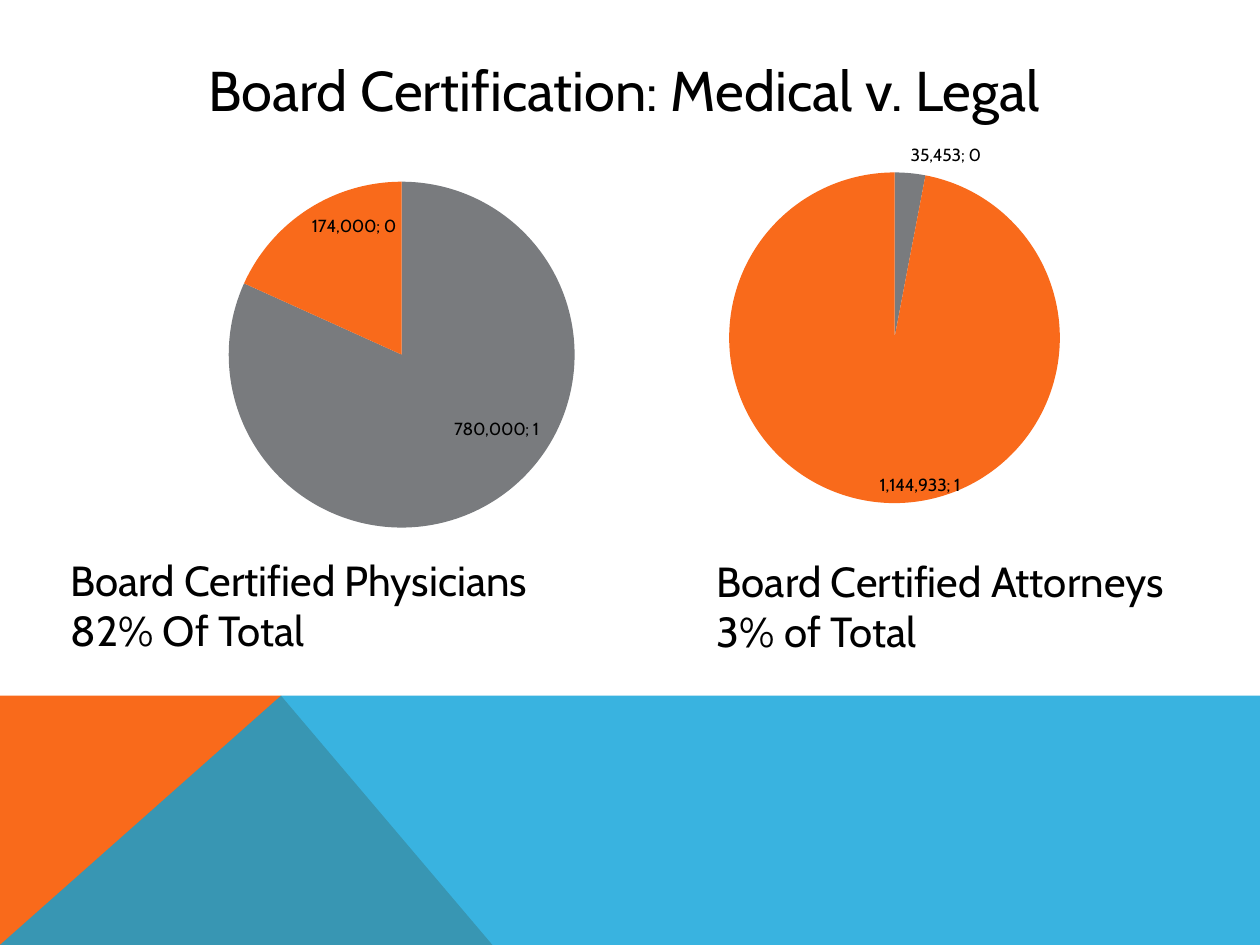
from dataclasses import dataclass
from typing import Optional

from lxml import etree
from pptx import Presentation
from pptx.chart import data as chart_data
from pptx.dml.color import RGBColor
from pptx.enum import chart as charts, text
from pptx.oxml import parse_xml
from pptx.oxml import ns
from pptx.util import Pt

FONT = "Cabin"
BLACK = RGBColor(0x00, 0x00, 0x00)
GRAY = RGBColor(0x79, 0x7B, 0x7E)
ORANGE = RGBColor(0xF9, 0x6A, 0x1B)
BLUE = RGBColor(0x08, 0xA1, 0xD9)
NUMBER_FORMAT = "#,##0"
CHART_URI = "http://schemas.openxmlformats.org/drawingml/2006/chart"
INSIDE = charts.XL_LABEL_POSITION.INSIDE_END
OUTSIDE = charts.XL_LABEL_POSITION.OUTSIDE_END


@dataclass
class Box:
    left: float
    top: float
    width: float
    height: float

    def lengths(self) -> list:
        return [Pt(v) for v in (self.left, self.top, self.width, self.height)]


@dataclass
class Pie:
    box: Box
    plot: Box  # fractions of the chart area
    values: tuple
    first_position: object
    first_shift: Optional[tuple] = None  # fractions of the chart area


PIES = [
    Pie(Box(84.24, 74.16, 272.88, 237.6), Box(0.17, 0.125, 0.725, 0.832),
        (780000, 174000), INSIDE, (0.1, -0.13)),
    Pie(Box(383.76, 74.16, 262.8, 216), Box(0.036, 0.113, 0.898, 0.875),
        (35453, 1144933), OUTSIDE),
]


def layout_xml(target: str, values: dict):
    """Manual layout for a plot area or for a shifted label."""
    items = "".join(f'<c:{key} val="{value}"/>' for key, value in values.items())
    return parse_xml(f'<c:layout xmlns:c="{CHART_URI}"><c:manualLayout>'
                     f'{target}{items}</c:manualLayout></c:layout>')


def add_separator(labels) -> None:
    separator = etree.Element(ns.qn("c:separator"))
    separator.text = "; "
    labels.find(ns.qn("c:showBubbleSize")).addnext(separator)


def style_font(font, size: float) -> None:
    font.name, font.size = FONT, Pt(size)
    font.color.rgb = BLACK


def add_pie(slide, pie: Pie) -> None:
    data = chart_data.CategoryChartData(number_format=NUMBER_FORMAT)
    data.categories = ["1", "2"]
    data.add_series("Series 1", pie.values)
    chart = slide.shapes.add_chart(
        charts.XL_CHART_TYPE.PIE, *pie.box.lengths(), data).chart
    chart.has_legend = chart.has_title = False
    style_font(chart.font, 10)
    series = chart.plots[0].series[0]
    for index, color in enumerate((GRAY, ORANGE)):
        fill = series.points[index].format.fill
        fill.solid()
        fill.fore_color.rgb = color

    # Labels of the whole series
    labels = series.data_labels
    labels.show_value = labels.show_percentage = True
    labels.number_format, labels.number_format_is_linked = NUMBER_FORMAT, False
    labels.position = INSIDE
    style_font(labels.font, 10)

    # The first slice has its own label place
    label = series.points[0].data_label
    label.position = pie.first_position
    style_font(label.font, 10)
    group = series._element.find(ns.qn("c:dLbls"))
    single = group.find(ns.qn("c:dLbl"))
    single.find(ns.qn("c:showPercent")).set("val", "1")
    number = etree.Element(ns.qn("c:numFmt"), formatCode=NUMBER_FORMAT, sourceLinked="0")
    index_mark = single.find(ns.qn("c:idx"))
    index_mark.addnext(number)
    if pie.first_shift:
        x, y = pie.first_shift
        index_mark.addnext(layout_xml("", {"x": x, "y": y}))
    for element in (group, single):
        add_separator(element)

    # Place of the pie inside the chart
    area = chart._chartSpace.chart.plotArea
    for old in area.findall(ns.qn("c:layout")):
        area.remove(old)
    plot = pie.plot
    area.insert(0, layout_xml('<c:layoutTarget val="inner"/>', {
        "xMode": "edge", "yMode": "edge", "x": plot.left, "y": plot.top,
        "w": plot.width, "h": plot.height}))


def add_polygon(slide, points: list, color: RGBColor, alpha: Optional[int] = None) -> None:
    builder = slide.shapes.build_freeform(*map(Pt, points[0]))
    builder.add_line_segments([(Pt(x), Pt(y)) for x, y in points[1:]], close=True)
    shape = builder.convert_to_shape()
    shape.shadow.inherit = False
    shape.fill.solid()
    shape.fill.fore_color.rgb = color
    shape.line.fill.background()
    if alpha is not None:
        color_element = shape._element.spPr.find(".//" + ns.qn("a:srgbClr"))
        etree.SubElement(color_element, ns.qn("a:alpha"), val=str(alpha * 1000))


def write(shape, lines: list, size: float, align, anchor, breaks: bool = False) -> None:
    """Write lines as paragraphs, or as one paragraph with line breaks."""
    frame = shape.text_frame
    frame.word_wrap = True
    frame.auto_size = text.MSO_AUTO_SIZE.NONE
    frame.vertical_anchor = anchor
    para = frame.paragraphs[0]
    for index, line in enumerate(lines):
        if index and breaks:
            para.add_line_break()
        elif index:
            para = frame.add_paragraph()
        para.alignment = align
        span = para.add_run()
        span.text = line
        style_font(span.font, size)


def main() -> None:
    deck = Presentation()
    deck.slide_width, deck.slide_height = Pt(720), Pt(540)
    slide = deck.slides.add_slide(deck.slide_layouts[5])
    left, center = text.PP_ALIGN.LEFT, text.PP_ALIGN.CENTER
    middle, top = text.MSO_ANCHOR.MIDDLE, text.MSO_ANCHOR.TOP

    # Coloured band at the foot
    band_top, peak = 397.6, 160.6
    add_polygon(slide, [(0, 540), (0, band_top), (peak, band_top), (281.4, 540)], ORANGE)
    add_polygon(slide, [(0, 540), (peak, band_top), (720, band_top), (720, 540)], BLUE, 80)

    # Pies
    for pie in PIES:
        add_pie(slide, pie)

    # Captions and heading
    physicians = slide.shapes.title
    physicians.left, physicians.top, physicians.width, physicians.height = Box(
        33.12, 305.28, 308.88, 80.64).lengths()
    write(physicians, ["Board Certified Physicians ", "82% Of Total"], 24, left, middle,
          breaks=True)
    attorneys = slide.shapes.add_textbox(*Box(402.48, 311.76, 287.28, 68.4).lengths())
    write(attorneys, ["Board Certified Attorneys", "3% of Total"], 24, left, middle)
    heading = slide.shapes.add_textbox(*Box(41.76, 28.08, 630, 46.08).lengths())
    write(heading, ["Board Certification: Medical v. Legal"], 32, center, top)

    deck.save("out.pptx")


if __name__ == "__main__":
    main()
